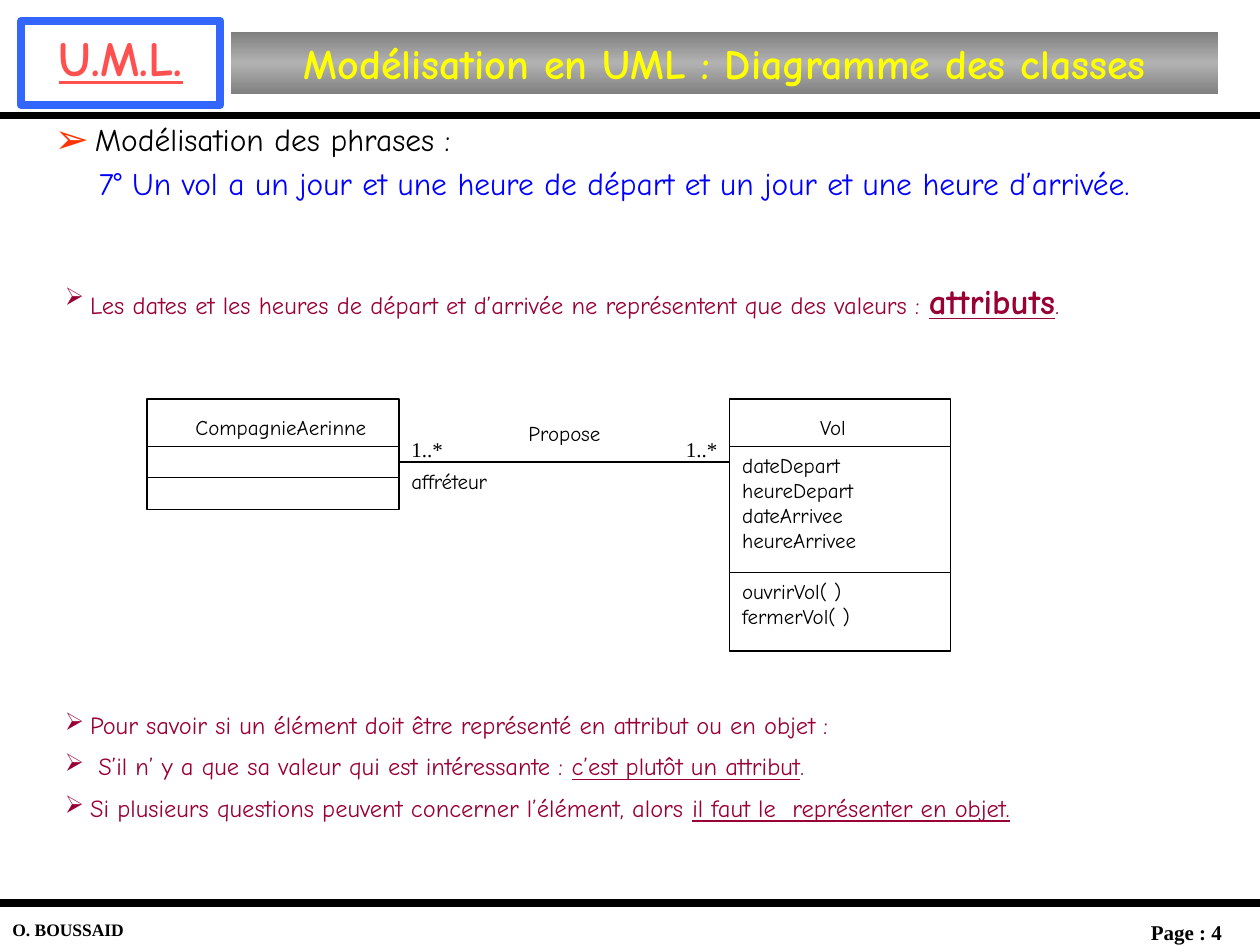
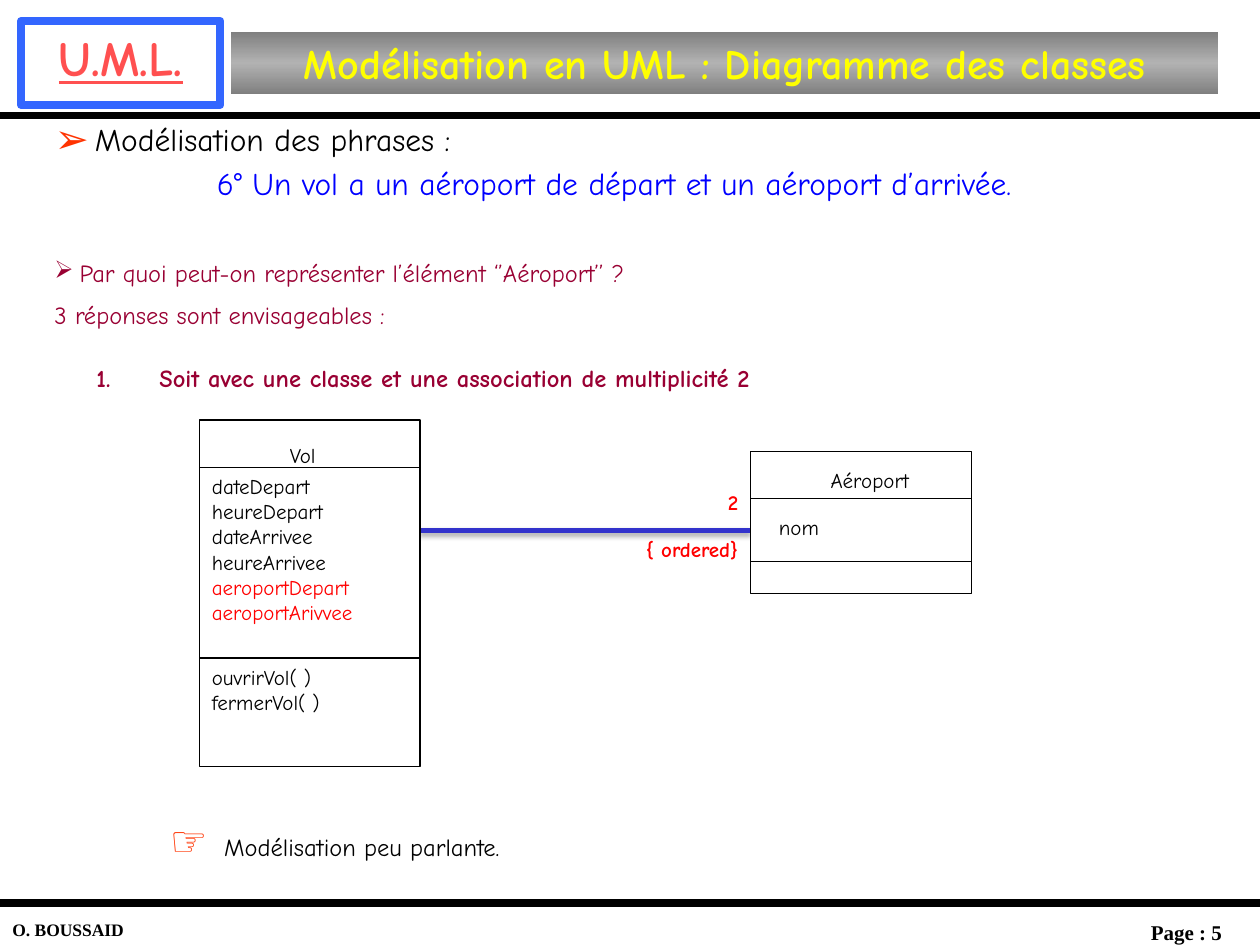
from dataclasses import dataclass
from itertools import accumulate

from pptx import Presentation
from pptx.dml.color import RGBColor
from pptx.enum.shapes import MSO_CONNECTOR as Connector, MSO_SHAPE as Shape
from pptx.enum.text import MSO_ANCHOR as Anchor, MSO_AUTO_SIZE as AutoSize, PP_ALIGN as Align
from pptx.oxml import parse_xml
from pptx.oxml.ns import nsdecls
from pptx.util import Pt


@dataclass(frozen=True)
class Theme:
    hand: str = "Comic Neue"
    serif: str = "Times New Roman"
    black: str = "000000"
    white: str = "FFFFFF"
    logo: str = "FF5050"
    frame: str = "3366FF"
    title: str = "FFFF00"
    band_edge: str = "7F7F7F"
    band_middle: str = "B2B2B2"
    arrow: str = "FF3300"
    sentence: str = "0000FF"
    remark: str = "990033"
    accent: str = "FF0000"
    association: str = "3333CC"
    logo_size: int = 28
    title_size: int = 24
    strong_size: int = 20
    heading_size: int = 18
    remark_size: int = 14
    label_size: int = 12
    author_size: int = 10
    thin: float = 0.75
    thick: float = 4.5


THEME = Theme()
INSETS = (7.2, 3.6, 7.2, 3.6)
NAME_INSETS = (7.2, 0, 7.2, 3.6)
ARROW = '<a:buChar {ns} char="➢"/>'
LARGE_ARROW = (f'<a:buClr {{ns}}><a:srgbClr val="{THEME.arrow}"/></a:buClr>',
               '<a:buSzPct {ns} val="130000"/>', ARROW)
NUMBER = '<a:buAutoNum {ns} type="arabicPeriod"/>'
NO_BULLET = '<a:buNone {ns}/>'


@dataclass
class Span:
    text: str
    size: int = THEME.label_size
    color: str = THEME.black
    bold: bool = False
    underline: bool = False
    font: str = THEME.hand


@dataclass
class Para:
    spans: list
    align: Align = Align.LEFT
    hanging: float = 0
    before: float = 0
    bullet: tuple = (NO_BULLET,)


def element(xml):
    return parse_xml(xml.replace("{ns}", nsdecls("a")))


def remark(text, **style):
    return Span(text, THEME.remark_size, THEME.remark, **style)


def remark_para(*spans, bullet=ARROW, hanging=14.4):
    return Para(list(spans), hanging=hanging, before=7, bullet=(bullet,))


def label(text, align=Align.LEFT, **style):
    return Para([Span(text, **style)], align)


class Deck:
    """Holds the theme and the current page, and draws on that page."""

    def __init__(self, theme):
        self.theme = theme
        self.file = Presentation()
        self.file.slide_width, self.file.slide_height = Pt(720), Pt(540)
        self.page = None

    def new_page(self, number, sentence):
        """Start a page with the shared frame and the sentence to model."""
        theme = self.theme
        self.page = self.file.slides.add_slide(self.file.slide_layouts[1])
        title, body = self.page.placeholders
        self.place(title, 132, 18, 564, 36)
        title._element.spPr.append(element(
            '<a:gradFill {ns} rotWithShape="1"><a:gsLst>'
            + "".join(f'<a:gs pos="{position}"><a:srgbClr val="{color}"/></a:gs>'
                      for position, color in ((0, theme.band_edge), (50000, theme.band_middle),
                                              (100000, theme.band_edge)))
            + '</a:gsLst><a:lin ang="5400000" scaled="0"/></a:gradFill>'))
        self.fill_text(title, [Para([Span("Modélisation en UML : Diagramme des classes",
                                          theme.title_size, theme.title, True)], Align.CENTER)],
                       anchor=Anchor.MIDDLE)

        self.rectangle(12, 12, 114, 48, theme.frame, theme.thick)
        self.text(12, 12, 114, 48, label("U.M.L.", Align.CENTER, size=theme.logo_size,
                                         color=theme.logo, bold=True, underline=True))
        for height in (66, 516):
            self.line(0, height, 720, height, theme.black, theme.thick)
        self.text(0, 521.5, 84, 18, label("O. BOUSSAID", size=theme.author_size,
                                          bold=True, font=theme.serif))
        self.text(636, 522, 84, 18, label(f"Page : {number}", Align.CENTER,
                                          bold=True, font=theme.serif))

        self.place(body, 24, 65, 654, 57)
        self.fill_text(body, [
            Para([Span("Modélisation des phrases :", theme.heading_size)],
                 hanging=23, bullet=LARGE_ARROW),
            Para([Span(sentence, theme.heading_size, theme.sentence)],
                 Align.CENTER, hanging=23, before=3.5)])

    def place(self, box, left, top, width, height):
        box.left, box.top, box.width, box.height = map(Pt, (left, top, width, height))

    def fill_text(self, box, paras, insets=INSETS, anchor=Anchor.TOP, wrap=True):
        frame = box.text_frame
        frame.auto_size = AutoSize.NONE
        frame.word_wrap = wrap
        frame.vertical_anchor = anchor
        (frame.margin_left, frame.margin_top,
         frame.margin_right, frame.margin_bottom) = map(Pt, insets)
        for index, para in enumerate(paras):
            target = frame.add_paragraph() if index else frame.paragraphs[0]
            properties = target._p.get_or_add_pPr()
            properties.set("marL", str(Pt(para.hanging)))
            properties.set("indent", str(-Pt(para.hanging)))
            for bullet in para.bullet:
                properties.append(element(bullet))
            target.alignment = para.align
            target.space_before = Pt(para.before if index else 0)
            for span in para.spans:
                run = target.add_run()
                run.text = span.text
                run.font.name = span.font
                run.font.size = Pt(span.size)
                run.font.bold = span.bold
                run.font.underline = span.underline
                run.font.color.rgb = RGBColor.from_string(span.color)

    def text(self, left, top, width, height, *paras, **layout):
        box = self.page.shapes.add_textbox(*map(Pt, (left, top, width, height)))
        self.fill_text(box, paras, **layout)

    def rectangle(self, left, top, width, height, color, weight, fill=None):
        box = self.page.shapes.add_shape(Shape.RECTANGLE, *map(Pt, (left, top, width, height)))
        box.shadow.inherit = False
        if fill:
            box.fill.solid()
            box.fill.fore_color.rgb = RGBColor.from_string(fill)
        else:
            box.fill.background()
        box.line.color.rgb = RGBColor.from_string(color)
        box.line.width = Pt(weight)

    def line(self, x1, y1, x2, y2, color, weight, shadow=False):
        line = self.page.shapes.add_connector(Connector.STRAIGHT, *map(Pt, (x1, y1, x2, y2)))
        line.line.color.rgb = RGBColor.from_string(color)
        line.line.width = Pt(weight)
        effect = (f'<a:outerShdw blurRad="{Pt(3.1)}" dist="{Pt(1.8)}" dir="5400000" '
                  f'rotWithShape="0"><a:srgbClr val="{self.theme.black}">'
                  '<a:alpha val="35000"/></a:srgbClr></a:outerShdw>') if shadow else ""
        line._element.spPr.append(element(f"<a:effectLst {{ns}}>{effect}</a:effectLst>"))

    def uml_class(self, name, left, top, width, heights, name_width,
                  attributes=(), operations=(), name_top=9):
        """Draw a class as three compartments of the given heights."""
        theme = self.theme
        self.rectangle(left, top, width, sum(heights), theme.black, theme.thin, theme.white)
        dividers = [top + offset for offset in accumulate(heights[:2])]
        for divider in dividers:
            self.line(left, divider, left + width, divider, theme.black, theme.thin)
        self.text(left + 9, top + name_top, name_width, 20,
                  label(name, Align.CENTER), insets=NAME_INSETS)
        for members, divider, height in zip((attributes, operations), dividers, heights[1:]):
            if members:
                self.text(left, divider, width, height, *members)


def valued_attributes(deck):
    theme = deck.theme
    deck.new_page(4, "7° Un vol a un jour et une heure de départ et un jour "
                     "et une heure d’arrivée.")
    deck.text(30, 156, 660, 31, remark_para(
        remark("Les dates et les heures de départ et d’arrivée ne représentent "
               "que des valeurs : "),
        Span("attributs", theme.strong_size, theme.remark, True, True),
        remark(".")))

    deck.uml_class("CompagnieAerinne", 84, 228, 144, (27, 18, 18), 135)
    deck.uml_class("Vol", 417, 228, 126, (27, 72, 45), 100, FLIGHT_ATTRIBUTES, FLIGHT_OPERATIONS)
    deck.line(228, 264, 417, 264, theme.black, theme.thin)
    deck.text(255, 237, 135, 27, label("Propose", Align.CENTER))
    deck.text(363, 246, 54, 18, label("1..*", Align.RIGHT, font=theme.serif))
    deck.text(228, 246, 54, 18, label("1..*", font=theme.serif))
    deck.text(228, 264, 135, 27, label("affréteur"))

    deck.text(30, 402, 660, 74,
              remark_para(remark("Pour savoir si un élément doit être représenté "
                                 "en attribut ou en objet :")),
              remark_para(remark(" S’il n’ y a que sa valeur qui est intéressante : "),
                          remark("c’est plutôt un attribut", underline=True),
                          remark(".")),
              remark_para(remark("Si plusieurs questions peuvent concerner l’élément, alors "),
                          remark("il faut le  représenter en objet.", underline=True)))


def airport_as_class(deck):
    theme = deck.theme
    deck.new_page(5, "6° Un vol a un aéroport de départ et un aéroport d’arrivée.")
    deck.text(24, 144, 660, 49,
              remark_para(remark("Par quoi peut-on représenter l’élément ‘’Aéroport’’ ?")),
              remark_para(remark("3 réponses sont envisageables :"), bullet=NO_BULLET))
    deck.text(48, 204, 434, 24, remark_para(
        remark("Soit avec une classe et une association de multiplicité 2", bold=True),
        bullet=NUMBER, hanging=36), wrap=False)

    deck.line(240, 303, 429, 303, theme.association, 3, shadow=True)
    accent = {"align": Align.RIGHT, "color": theme.accent, "bold": True}
    deck.text(348, 303, 81, 27, label("{ ordered}", **accent))
    deck.text(393, 276, 36, 27, label("2", **accent))
    airports = [label(name, color=theme.accent) for name in ("aeroportDepart", "aeroportArivvee")]
    deck.uml_class("Vol", 114, 240, 126, (27, 109, 62), 100,
                   FLIGHT_ATTRIBUTES + airports, FLIGHT_OPERATIONS, name_top=13)
    deck.uml_class("Aéroport", 429, 258, 126, (27, 36, 18), 118)
    deck.text(438, 294, 108, 18, label("nom"), insets=NAME_INSETS)

    deck.text(90, 462, 588, 36, Para(
        [Span("☞\t", theme.title_size, theme.arrow, True),
         Span("Modélisation peu parlante.", theme.remark_size)], hanging=31))


FLIGHT_ATTRIBUTES = [label(name) for name in
                     ("dateDepart", "heureDepart", "dateArrivee", "heureArrivee")]
FLIGHT_OPERATIONS = [label(name) for name in ("ouvrirVol( )", "fermerVol( )")]


def main():
    deck = Deck(THEME)
    valued_attributes(deck)
    airport_as_class(deck)
    deck.file.save("out.pptx")


if __name__ == "__main__":
    main()
